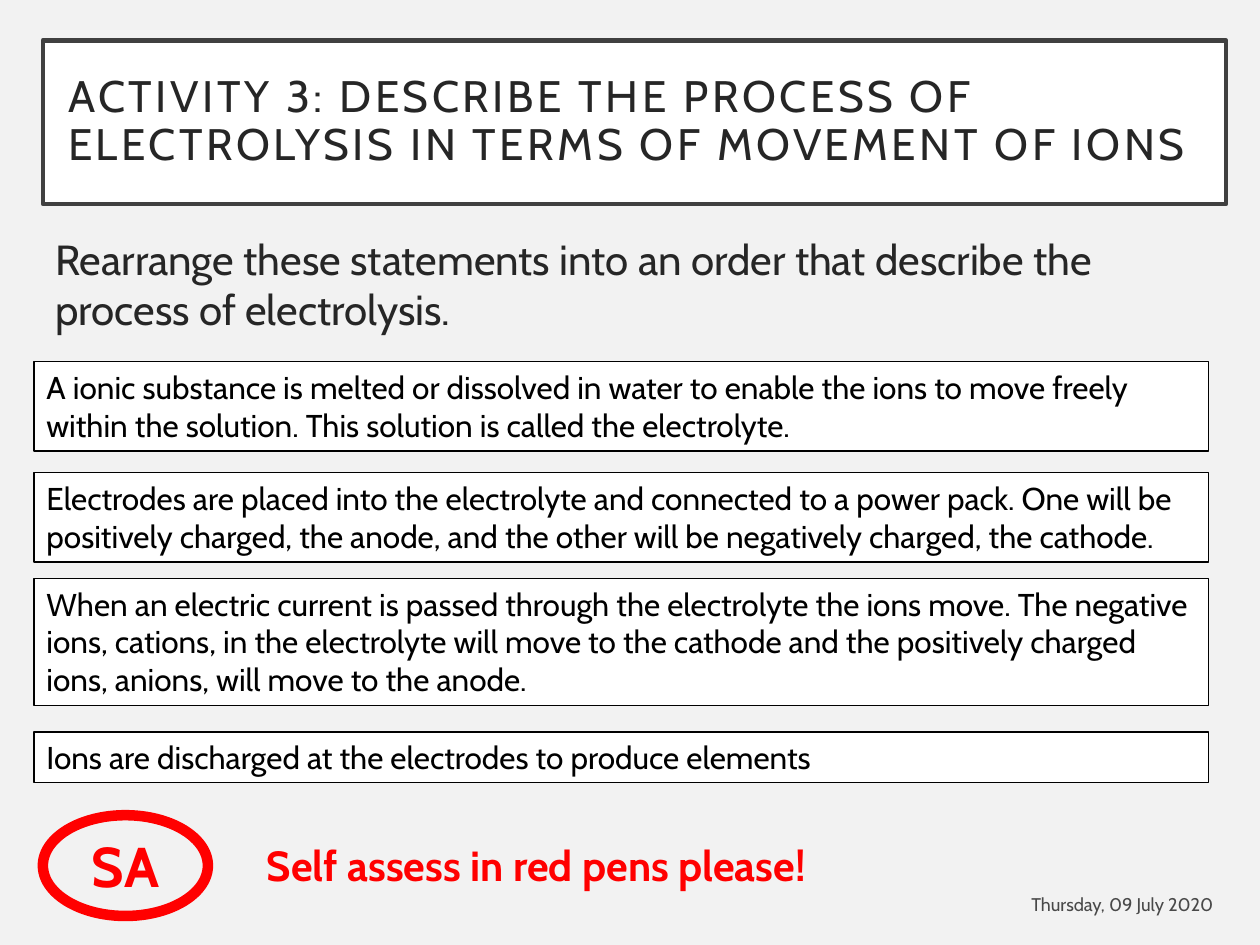
"""Build the electrolysis statement-ordering slide."""
from dataclasses import dataclass

from pptx import Presentation
from pptx import util as u
from pptx.dml import color
from pptx.enum import shapes, text
from pptx.oxml import ns, xmlchemy
from pptx.shapes import autoshape
from pptx.slide import Slide

FONT = "Cabin"
COLOURS = {
    "background": "F2F2F2",
    "panel": "FFFFFF",
    "border": "404040",
    "heading": "262626",
    "statement": "000000",
    "date": "494949",
    "review": "FF0000",
}


@dataclass
class Box:
    left: float
    top: float
    width: float
    height: float

    def lengths(self) -> list[u.Length]:
        return [u.Inches(value) for value in (self.left, self.top, self.width, self.height)]


@dataclass
class Style:
    size: float
    colour: str
    bold: bool = False
    align: text.PP_ALIGN = text.PP_ALIGN.LEFT
    anchor: text.MSO_ANCHOR = text.MSO_ANCHOR.TOP
    fit: text.MSO_AUTO_SIZE = text.MSO_AUTO_SIZE.NONE


@dataclass
class Statement:
    top: float
    height: float
    wording: str


STATEMENTS = [
    Statement(2.87, 0.71, "A ionic substance is melted or dissolved in water to enable the ions "
              "to move freely within the solution. This solution is called the electrolyte."),
    Statement(3.75, 0.71, "Electrodes are placed into the electrolyte and connected to a power pack. "
              "One will be positively charged, the anode, and the other will be negatively "
              "charged, the cathode."),
    Statement(4.59, 1.01, "When an electric current is passed through the electrolyte the ions move. "
              "The negative ions, cations, in the electrolyte will move to the cathode and the "
              "positively charged ions, anions, will move to the anode."),
    Statement(5.81, 0.4, "Ions are discharged at the electrodes to produce elements"),
]


def rgb(name: str) -> color.RGBColor:
    return color.RGBColor.from_string(COLOURS[name])


def write(shape: autoshape.Shape, wording: str, style: Style) -> None:
    frame = shape.text_frame
    frame.text = wording
    frame.word_wrap = True
    frame.auto_size = style.fit
    frame.vertical_anchor = style.anchor
    paragraph = frame.paragraphs[0]
    paragraph.alignment = style.align
    font = paragraph.runs[0].font
    font.name = FONT
    font.size = u.Pt(style.size)
    font.bold = style.bold
    font.color.rgb = rgb(style.colour)


def outline(shape: autoshape.Shape, colour: str, width: float) -> None:
    shape.line.color.rgb = rgb(colour)
    shape.line.width = u.Pt(width)


def place(shape: autoshape.Shape, box: Box) -> None:
    shape.left, shape.top, shape.width, shape.height = box.lengths()


def fill_panel(shape: autoshape.Shape) -> None:
    shape.fill.solid()
    shape.fill.fore_color.rgb = rgb("panel")


def add_title(slide: Slide) -> None:
    title = slide.shapes.title
    place(title, Box(0.34, 0.32, 9.39, 1.3))
    fill_panel(title)
    outline(title, "border", 2.5)
    write(title, "ACTIVITY 3: DESCRIBE THE PROCESS OF ELECTROLYSIS IN TERMS OF MOVEMENT OF IONS",
          Style(25.2, "heading", anchor=text.MSO_ANCHOR.MIDDLE))
    frame = title.text_frame
    frame.margin_left = frame.margin_right = u.Inches(0.2)
    frame.margin_top = frame.margin_bottom = u.Inches(0.2)
    frame.paragraphs[0].line_spacing = 0.9
    for properties in title.element.iter(ns.qn("a:rPr")):
        properties.set("spc", "200")


def add_instruction(slide: Slide) -> None:
    body = slide.placeholders[1]
    place(body, Box(0.34, 1.8, 9.4, 4.8))
    write(body, "Rearrange these statements into an order that describe the process of electrolysis.",
          Style(24, "heading"))
    body.text_frame.paragraphs[0].space_before = u.Pt(10)
    for properties in body.element.iter(ns.qn("a:pPr")):
        properties.set("marL", "0")
        properties.set("indent", "0")
        properties.append(xmlchemy.OxmlElement("a:buNone"))


def add_label(slide: Slide, box: Box, wording: str, style: Style) -> None:
    write(slide.shapes.add_textbox(*box.lengths()), wording, style)


def add_statement(slide: Slide, statement: Statement) -> None:
    box = Box(0.27, statement.top, 9.32, statement.height)
    shape = slide.shapes.add_shape(shapes.MSO_SHAPE.RECTANGLE, *box.lengths())
    shape.shadow.inherit = False
    fill_panel(shape)
    outline(shape, "statement", 0.75)
    write(shape, statement.wording,
          Style(18, "statement", fit=text.MSO_AUTO_SIZE.SHAPE_TO_FIT_TEXT))


def add_badge(slide: Slide) -> None:
    badge = slide.shapes.add_shape(shapes.MSO_SHAPE.OVAL, *Box(0.34, 6.47, 1.31, 0.8).lengths())
    badge.shadow.inherit = False
    badge.fill.background()
    outline(badge, "review", 6)
    write(badge, "SA", Style(32, "review", bold=True, align=text.PP_ALIGN.CENTER,
                             anchor=text.MSO_ANCHOR.MIDDLE))


def main() -> None:
    presentation = Presentation()
    presentation.slide_width = u.Inches(10)
    presentation.slide_height = u.Inches(7.5)
    slide = presentation.slides.add_slide(presentation.slide_layouts[1])
    slide.background.fill.solid()
    slide.background.fill.fore_color.rgb = rgb("background")
    add_title(slide)
    add_instruction(slide)
    add_label(slide, Box(7.47, 7, 2.26, 0.35), "Thursday, 09 July 2020",
              Style(10.5, "date", align=text.PP_ALIGN.RIGHT, anchor=text.MSO_ANCHOR.MIDDLE))
    for statement in STATEMENTS:
        add_statement(slide, statement)
    add_badge(slide)
    add_label(slide, Box(2.02, 6.61, 5.82, 0.5), "Self assess in red pens please!",
              Style(24, "review", bold=True, fit=text.MSO_AUTO_SIZE.SHAPE_TO_FIT_TEXT))
    presentation.save("out.pptx")


if __name__ == "__main__":
    main()
